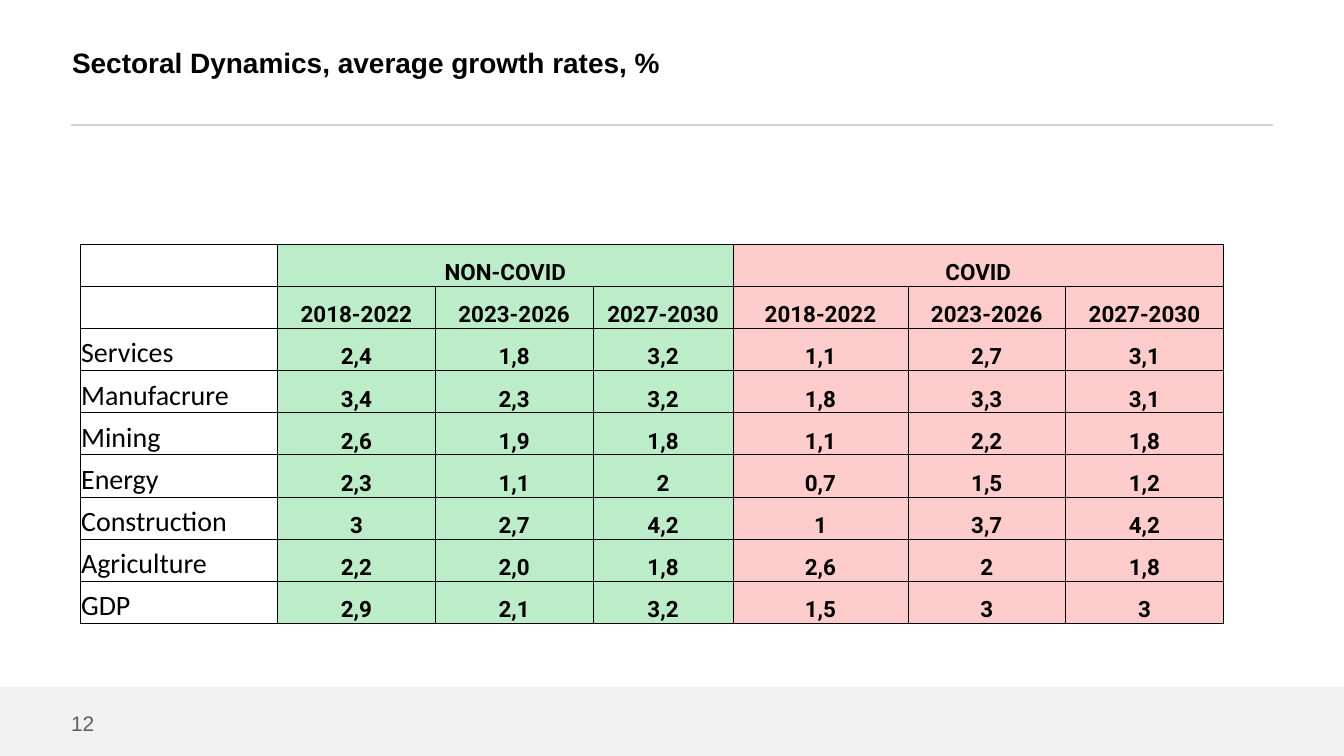
from lxml.etree import SubElement
from pptx import Presentation
from pptx.dml.color import RGBColor
from pptx.enum.shapes import MSO_CONNECTOR, MSO_SHAPE
from pptx.enum.text import MSO_ANCHOR, MSO_AUTO_SIZE, PP_ALIGN
from pptx.oxml import parse_xml
from pptx.oxml.ns import nsdecls, qn
from pptx.util import Cm, Pt

COLORS = {
    "text": "000000",
    "number": "5E5E5E",
    "rule": "D5D5D5",
    "footer": "F2F2F2",
    "border": "000000",
    "NON-COVID": "BDECC9",
    "COVID": "FFCCCC",
}
SCENARIOS = ["NON-COVID", "COVID"]
PERIODS = ["2018-2022", "2023-2026", "2027-2030"]
GROWTH = {
    "Services": ["2,4", "1,8", "3,2", "1,1", "2,7", "3,1"],
    "Manufacrure": ["3,4", "2,3", "3,2", "1,8", "3,3", "3,1"],
    "Mining": ["2,6", "1,9", "1,8", "1,1", "2,2", "1,8"],
    "Energy": ["2,3", "1,1", "2", "0,7", "1,5", "1,2"],
    "Construction": ["3", "2,7", "4,2", "1", "3,7", "4,2"],
    "Agriculture": ["2,2", "2,0", "1,8", "2,6", "2", "1,8"],
    "GDP": ["2,9", "2,1", "3,2", "1,5", "3", "3"],
}
COLUMN_WIDTHS = [9.93, 7.95, 7.95, 7.06, 8.81, 7.95, 7.95]


def color(name):
    """Return the named colour."""
    return RGBColor.from_string(COLORS[name])


def write(frame, text, *, size, font="Arial", ink="text", bold=False, align=PP_ALIGN.LEFT):
    """Put one formatted paragraph into a text frame."""
    para = frame.paragraphs[0]
    para.alignment = align
    span = para.add_run()
    span.text = text
    span.font.name = font
    span.font.size = Pt(size)
    span.font.bold = bold
    span.font.color.rgb = color(ink)


def clear_margins(frame):
    """Centre a frame vertically and remove its insets."""
    frame.margin_left = frame.margin_right = frame.margin_top = frame.margin_bottom = 0
    frame.vertical_anchor = MSO_ANCHOR.MIDDLE


def add_heading(page, left, top, width, height):
    """Place the title with a rule along the bottom of the heading."""
    title = page.shapes.title
    title.left, title.top = Cm(left + 0.05), Cm(top)
    title.width, title.height = Cm(51.16), Cm(height)
    frame = title.text_frame
    clear_margins(frame)
    frame.word_wrap = True
    frame.auto_size = MSO_AUTO_SIZE.NONE
    write(frame, "Sectoral Dynamics, average growth rates, %", size=40, bold=True)

    bottom = Cm(top + height)
    rule = page.shapes.add_connector(
        MSO_CONNECTOR.STRAIGHT, Cm(left), bottom, Cm(left + width), bottom
    )
    rule.line.color.rgb = color("rule")
    rule.line.width = Pt(1.5)
    SubElement(rule._element.spPr, qn("a:effectLst"))


def add_footer(page, left, top, width, height):
    """Draw the footer band with the page number."""
    band = page.shapes.add_shape(
        MSO_SHAPE.RECTANGLE, Cm(left), Cm(top), Cm(width), Cm(height)
    )
    band.shadow.inherit = False
    band.fill.solid()
    band.fill.fore_color.rgb = color("footer")
    band.line.fill.background()

    box = page.shapes.add_textbox(Cm(left + 3.58), Cm(top + 1.19), Cm(1.3), Cm(1.27))
    frame = box.text_frame
    clear_margins(frame)
    frame.word_wrap = False
    frame.auto_size = MSO_AUTO_SIZE.SHAPE_TO_FIT_TEXT
    write(frame, "12", size=30, ink="number")


def style_cell(cell, fill=None):
    """Set the fill, insets and borders of a table cell."""
    cell.margin_left = cell.margin_right = cell.margin_top = Cm(0.03)
    cell.margin_bottom = 0
    cell.vertical_anchor = MSO_ANCHOR.BOTTOM
    if fill:
        cell.fill.solid()
        cell.fill.fore_color.rgb = color(fill)
    else:
        cell.fill.background()
    properties = cell._tc.get_or_add_tcPr()
    for index, side in enumerate(["lnL", "lnR", "lnT", "lnB"]):
        border = parse_xml(
            f'<a:{side} {nsdecls("a")} w="{Pt(1)}"><a:solidFill>'
            f'<a:srgbClr val="{COLORS["border"]}"/></a:solidFill></a:{side}>'
        )
        properties.insert(index, border)


def add_growth_table(page, left, top, width, height):
    """Build the table of growth rates by sector, scenario and period."""
    span = len(PERIODS)
    scenario_row = [""] + [
        name if index == 0 else "" for name in SCENARIOS for index in range(span)
    ]
    period_row = [""] + PERIODS * len(SCENARIOS)
    rows = [scenario_row, period_row] + [[name, *rates] for name, rates in GROWTH.items()]
    frame = page.shapes.add_table(
        len(rows), len(COLUMN_WIDTHS), Cm(left), Cm(top), Cm(width), Cm(height)
    )
    table = frame.table
    table.first_row = table.horz_banding = False
    for column, column_width in zip(table.columns, COLUMN_WIDTHS):
        column.width = Cm(column_width)
    for row_index, values in enumerate(rows):
        table.rows[row_index].height = Cm(height / len(rows))
        for column_index, text in enumerate(values):
            cell = table.cell(row_index, column_index)
            is_label = column_index == 0
            style_cell(cell, None if is_label else SCENARIOS[(column_index - 1) // span])
            if text and is_label:
                write(cell.text_frame, text, size=40, font="Calibri")
            elif text:
                write(cell.text_frame, text, size=32, font="Roboto", bold=True,
                      align=PP_ALIGN.CENTER)
    for first in range(1, len(COLUMN_WIDTHS), span):
        table.cell(0, first).merge(table.cell(0, first + span - 1))


def main():
    """Build and save the deck."""
    deck = Presentation()
    deck.slide_width, deck.slide_height = Cm(67.74), Cm(38.1)
    page = deck.slides.add_slide(deck.slide_layouts[5])
    add_heading(page, 3.58, 0, 60.56, 6.3)
    add_footer(page, 0, 34.62, 67.74, 3.48)
    add_growth_table(page, 4.06, 12.29, sum(COLUMN_WIDTHS), 19.13)
    deck.save("out.pptx")


if __name__ == "__main__":
    main()
